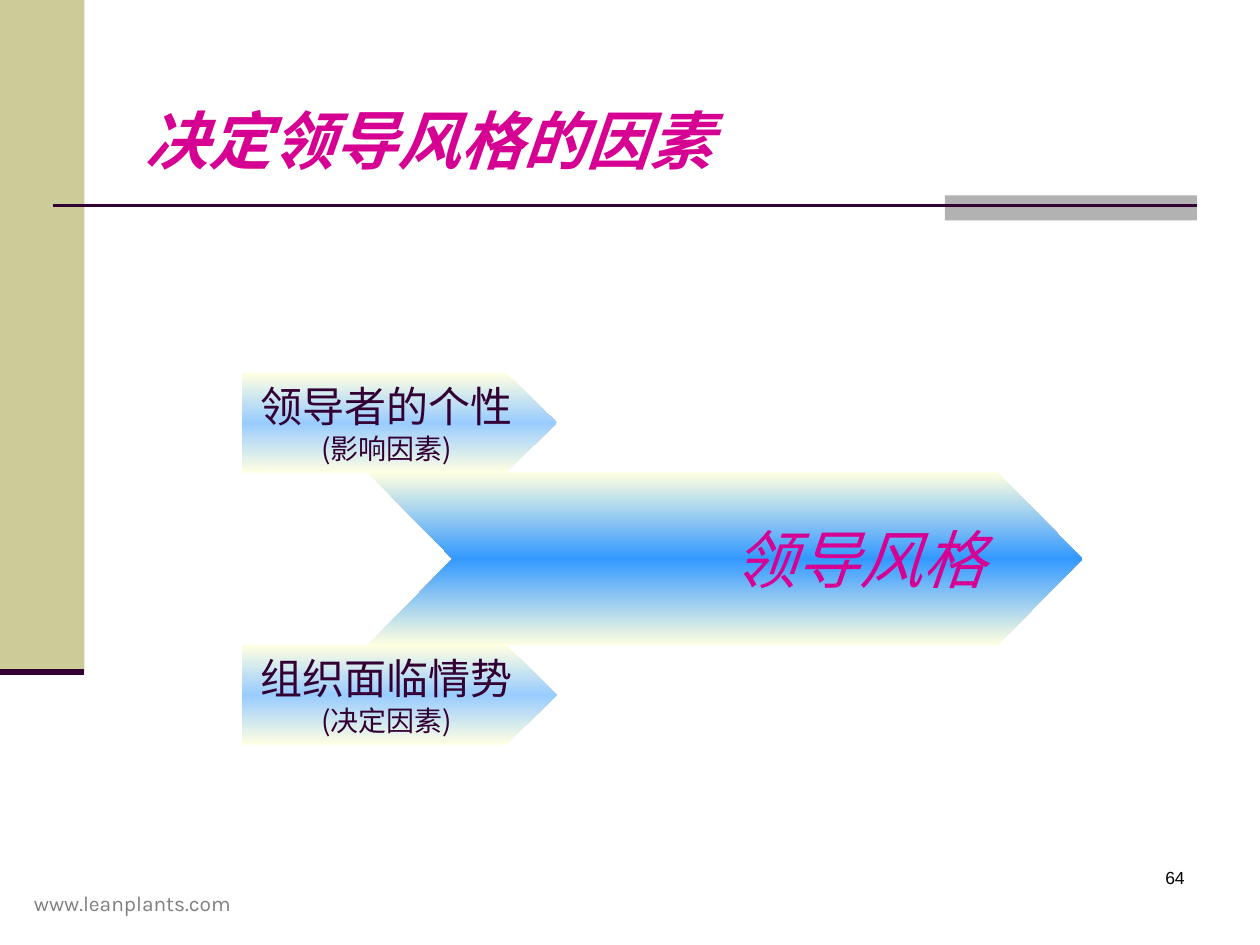
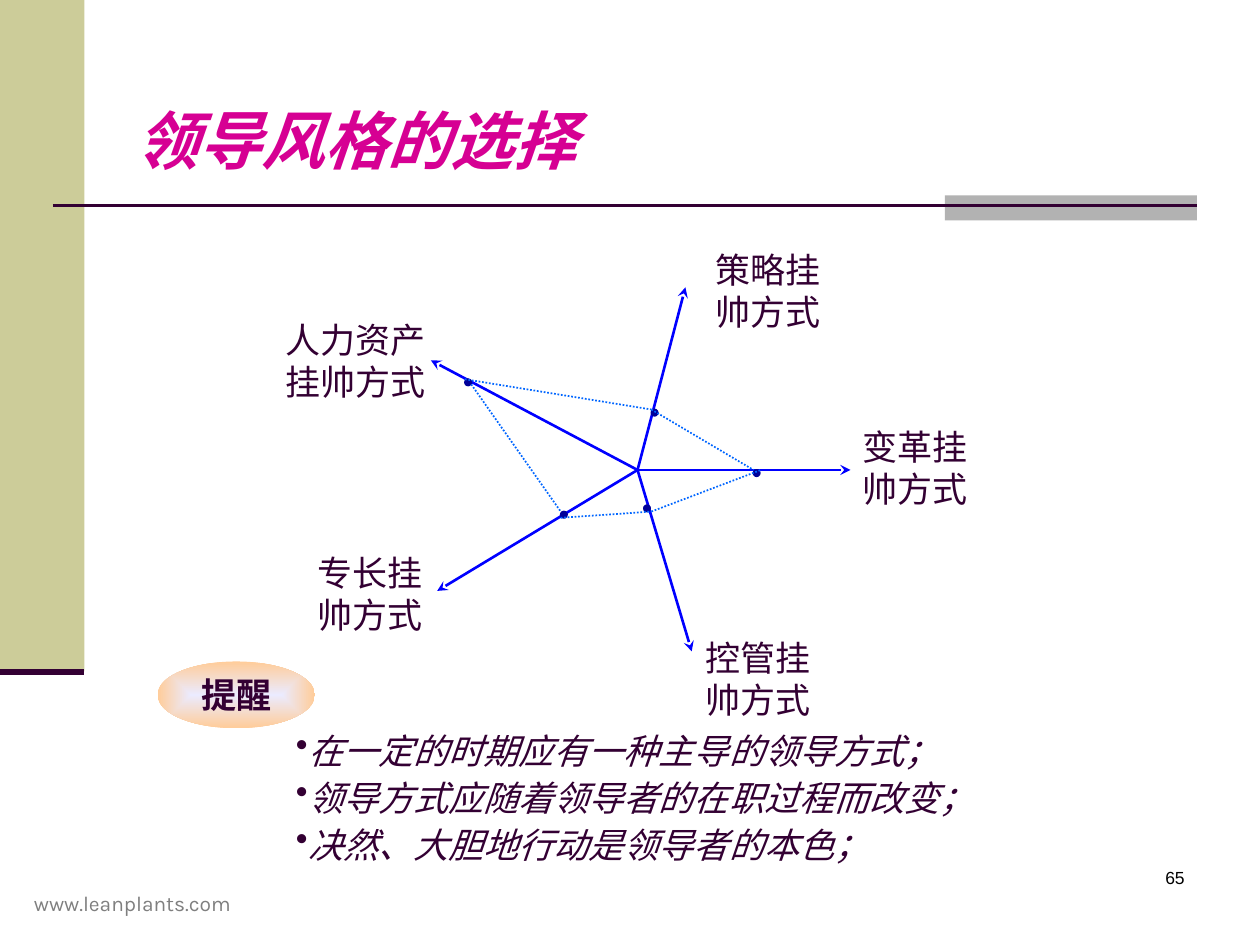
from pptx import Presentation
from pptx.dml.color import RGBColor
from pptx.enum import dml, shapes, text
from pptx.oxml import parse_xml
from pptx.oxml.ns import nsdecls, qn
from pptx.util import Inches, Pt

PLUM = RGBColor(0x33, 0x00, 0x33)
MAGENTA = RGBColor(0xD6, 0x00, 0x93)
OLIVE = RGBColor(0xCC, 0xCC, 0x99)
SILVER = RGBColor(0xB2, 0xB2, 0xB2)
GREY = RGBColor(0x7F, 0x7F, 0x7F)
BLACK = RGBColor(0x00, 0x00, 0x00)
AXIS_BLUE = RGBColor(0x00, 0x00, 0xFF)
DOT_BLUE = RGBColor(0x00, 0x00, 0x99)
WEB_BLUE = RGBColor(0x00, 0x66, 0xFF)
CREAM = RGBColor(0xFF, 0xFF, 0xE1)
SKY = RGBColor(0x99, 0xCC, 0xFF)
AZURE = RGBColor(0x33, 0x99, 0xFF)
LAVENDER = RGBColor(0xEB, 0xEB, 0xFF)
PEACH = RGBColor(0xFF, 0xCC, 0x99)

HAN = "Noto Sans CJK SC"
SERIF = "Times New Roman"
TITLE = dict(size=Pt(36), bold=True, italic=True)
LABEL = dict(name=SERIF, size=Pt(20))
TOP_DOWN = '<a:lin ang="5400000" scaled="0"/>'
FROM_CENTRE = ('<a:path path="shape"><a:fillToRect l="50000" t="50000" '
               'r="50000" b="50000"/></a:path>')


def add_run(paragraph, words, color, **formats):
    run = paragraph.add_run()
    run.text = words
    run.font.color.rgb = color
    for key, value in formats.items():
        setattr(run.font, key, value)
    if formats["name"] in (HAN, SERIF):
        latin = run.font._element.find(qn("a:latin"))
        latin.addnext(parse_xml(f'<a:ea {nsdecls("a")} typeface="{HAN}"/>'))


def add_line(slide, start, end, color, width):
    line = slide.shapes.add_connector(
        shapes.MSO_CONNECTOR.STRAIGHT, *map(Inches, (*start, *end)))
    line.line.color.rgb = color
    line.line.width = Pt(width)
    line._element.spPr.append(parse_xml(f'<a:effectLst {nsdecls("a")}/>'))
    return line


prs = Presentation()
prs.slide_width, prs.slide_height = Inches(10), Inches(7.5)

# Frame, title and footer of both slides
pages = []
for number, heading, font, left, width in [
    (64, "决定领导风格的因素", HAN, 1.06, 4.75),
    (65, "领导风格的选择", SERIF, 0.98, 3.75),
]:
    slide = prs.slides.add_slide(prs.slide_layouts[6])
    pages.append(slide)
    for box, color in [((0, 0, 0.67, 5.33), OLIVE), ((7.5, 1.55, 2, 0.2), SILVER)]:
        band = slide.shapes.add_shape(shapes.MSO_SHAPE.RECTANGLE, *map(Inches, box))
        band.shadow.inherit = False
        band.fill.solid()
        band.fill.fore_color.rgb = color
        band.line.fill.background()
    add_line(slide, (0.42, 1.63), (9.5, 1.63), PLUM, 1.5)
    add_line(slide, (0, 5.33), (0.67, 5.33), PLUM, 3.5)

    for box, words, align, color, formats in [
        ((0.17, 7.02, 2.51, 0.34), "www.leanplants.com", text.PP_ALIGN.LEFT, GREY,
         dict(name="Karla", size=Pt(12))),
        ((7.42, 6.83, 2.08, 0.5), str(number), text.PP_ALIGN.RIGHT, BLACK,
         dict(name="Arial", size=Pt(10))),
        ((left, 0.76, width, 0.71), heading, text.PP_ALIGN.LEFT, MAGENTA,
         dict(name=font, **TITLE)),
    ]:
        frame = slide.shapes.add_textbox(*map(Inches, box)).text_frame
        frame.word_wrap = True
        frame.paragraphs[0].alignment = align
        add_run(frame.paragraphs[0], words, color, **formats)

factors, choice = pages

# Five leadership styles on axes from one centre
for left, top, width, style in [
    (5.58, 1.92, 1.08, "策略挂帅方式"),
    (5.5, 5, 1.08, "控管挂帅方式"),
    (2.42, 4.33, 1.08, "专长挂帅方式"),
    (6.75, 3.33, 1.08, "变革挂帅方式"),
    (2.17, 2.48, 1.42, "人力资产挂帅方式"),
]:
    frame = choice.shapes.add_textbox(*map(Inches, (left, top, width, 0.77))).text_frame
    frame.word_wrap = True
    add_run(frame.paragraphs[0], style, PLUM, **LABEL)

for tip in [(3.42, 2.86), (3.47, 4.69), (5.49, 5.17), (6.75, 3.73), (5.44, 2.28)]:
    axis = add_line(choice, (5.06, 3.73), tip, AXIS_BLUE, 1.5)
    axis.line._ln.append(parse_xml(f'<a:tailEnd {nsdecls("a")} type="stealth"/>'))

for left, top in [(3.69, 3.01), (4.45, 4.06), (5.98, 3.73), (5.17, 3.25), (5.11, 4.01)]:
    score = choice.shapes.add_shape(
        shapes.MSO_SHAPE.OVAL, *map(Inches, (left, top, 0.05, 0.05)))
    score.shadow.inherit = False
    score.fill.solid()
    score.fill.fore_color.rgb = DOT_BLUE
    score.line.color.rgb = DOT_BLUE
    score.line.width = Pt(1)

for start, end in [
    ((3.74, 3.05), (4.45, 4.06)),
    ((4.45, 4.11), (5.17, 4.06)),
    ((5.17, 4.06), (6.04, 3.73)),
    ((5.17, 3.25), (5.98, 3.73)),
    ((3.69, 3.01), (5.17, 3.25)),
]:
    add_line(choice, start, end, WEB_BLUE, 1).line.dash_style = dml.MSO_LINE.ROUND_DOT

# Reminders
frame = choice.shapes.add_textbox(*map(Inches, (2.25, 5.83, 5.58, 1.14))).text_frame
frame.word_wrap = True
for index, reminder in enumerate([
    "在一定的时期应有一种主导的领导方式；",
    "领导方式应随着领导者的在职过程而改变；",
    "决然、大胆地行动是领导者的本色；",
]):
    paragraph = frame.add_paragraph() if index else frame.paragraphs[0]
    paragraph.line_spacing = 0.7
    if index:
        paragraph.space_before = Pt(10)
    paragraph._p.get_or_add_pPr().append(
        parse_xml(f'<a:buChar {nsdecls("a")} char="•"/>'))
    add_run(paragraph, reminder, PLUM, italic=True, **LABEL)

# Gradient shapes: two factors, the resulting style and the reminder badge
PLATE, CHEVRON = shapes.MSO_SHAPE.PENTAGON, shapes.MSO_SHAPE.CHEVRON
FACTOR = dict(name=HAN, size=Pt(24))
NOTE = dict(name=HAN, size=Pt(16))
for slide, outline, point, box, stops, direction, wrap, align, runs in [
    (factors, PLATE, 0.513, (1.92, 2.96, 2.5, 0.79), (CREAM, SKY, CREAM), TOP_DOWN,
     True, text.PP_ALIGN.CENTER,
     [("领导者的个性", PLUM, FACTOR), ("(影响因素)", PLUM, NOTE)]),
    (factors, PLATE, 0.513, (1.92, 5.12, 2.5, 0.79), (CREAM, SKY, CREAM), TOP_DOWN,
     True, text.PP_ALIGN.CENTER,
     [("组织面临情势", PLUM, FACTOR), ("(决定因素)", PLUM, NOTE)]),
    (factors, CHEVRON, 0.491, (2.92, 3.75, 5.67, 1.37), (CREAM, AZURE, CREAM), TOP_DOWN,
     False, text.PP_ALIGN.RIGHT,
     [("领导风格", MAGENTA, dict(name=HAN, size=Pt(36), italic=True))]),
    (choice, shapes.MSO_SHAPE.OVAL, None, (1.25, 5.25, 1.25, 0.53), (LAVENDER, PEACH),
     FROM_CENTRE, False, text.PP_ALIGN.CENTER,
     [("提醒", PLUM, dict(bold=True, **LABEL))]),
]:
    shape = slide.shapes.add_shape(outline, *map(Inches, box))
    if point:
        shape.adjustments[0] = point
    shape.shadow.inherit = False
    shape.line.fill.background()
    shape.fill.background()
    step = 100000 // (len(stops) - 1)
    stop_list = "".join(f'<a:gs pos="{i * step}"><a:srgbClr val="{color}"/></a:gs>'
                        for i, color in enumerate(stops))
    properties = shape._element.spPr
    properties.replace(properties.find(qn("a:noFill")), parse_xml(
        f'<a:gradFill {nsdecls("a")} rotWithShape="1">'
        f'<a:gsLst>{stop_list}</a:gsLst>{direction}</a:gradFill>'))
    frame = shape.text_frame
    frame.word_wrap = wrap
    frame.vertical_anchor = text.MSO_ANCHOR.MIDDLE
    frame.paragraphs[0].alignment = align
    for words, color, formats in runs:
        add_run(frame.paragraphs[0], words, color, **formats)

prs.save("out.pptx")
